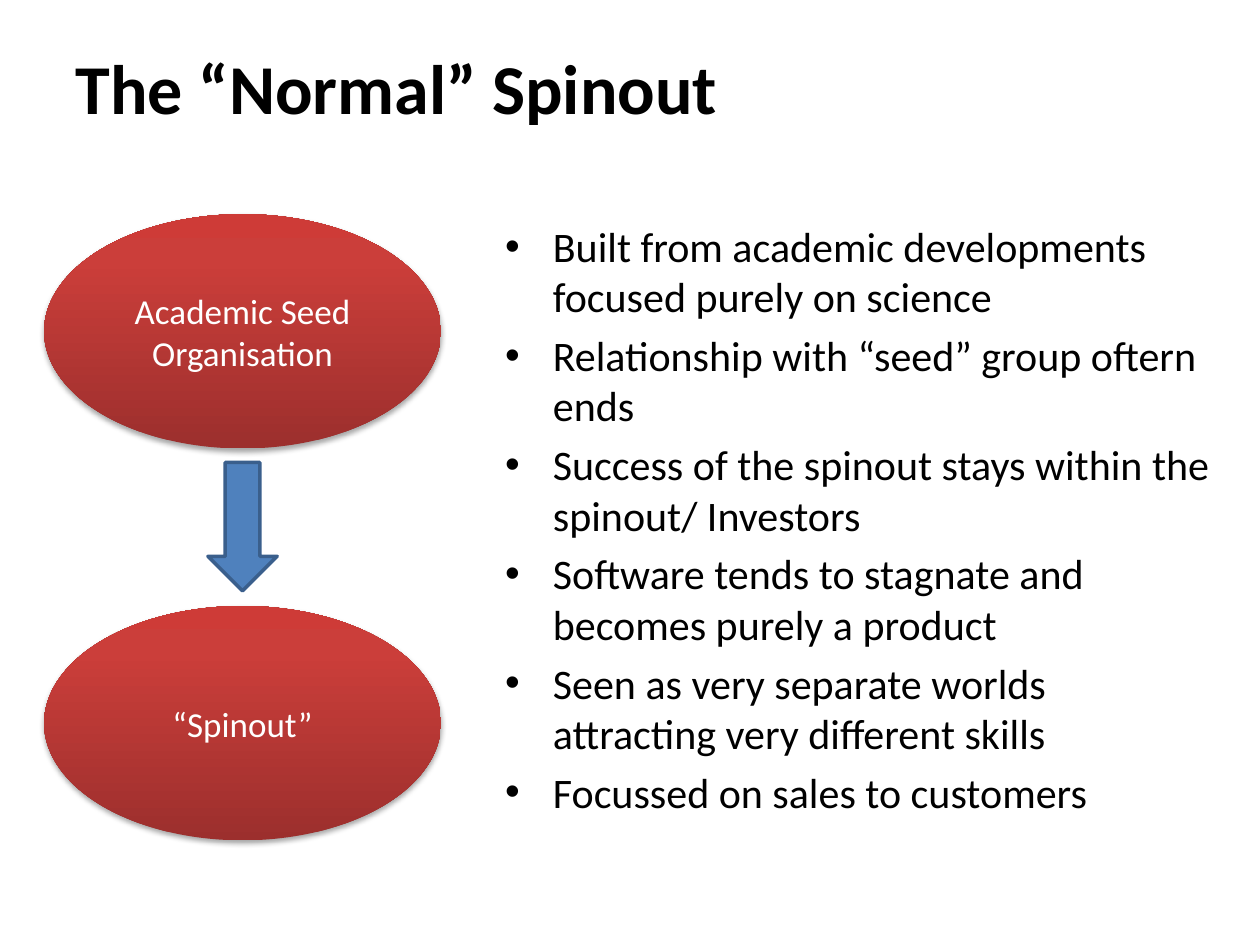
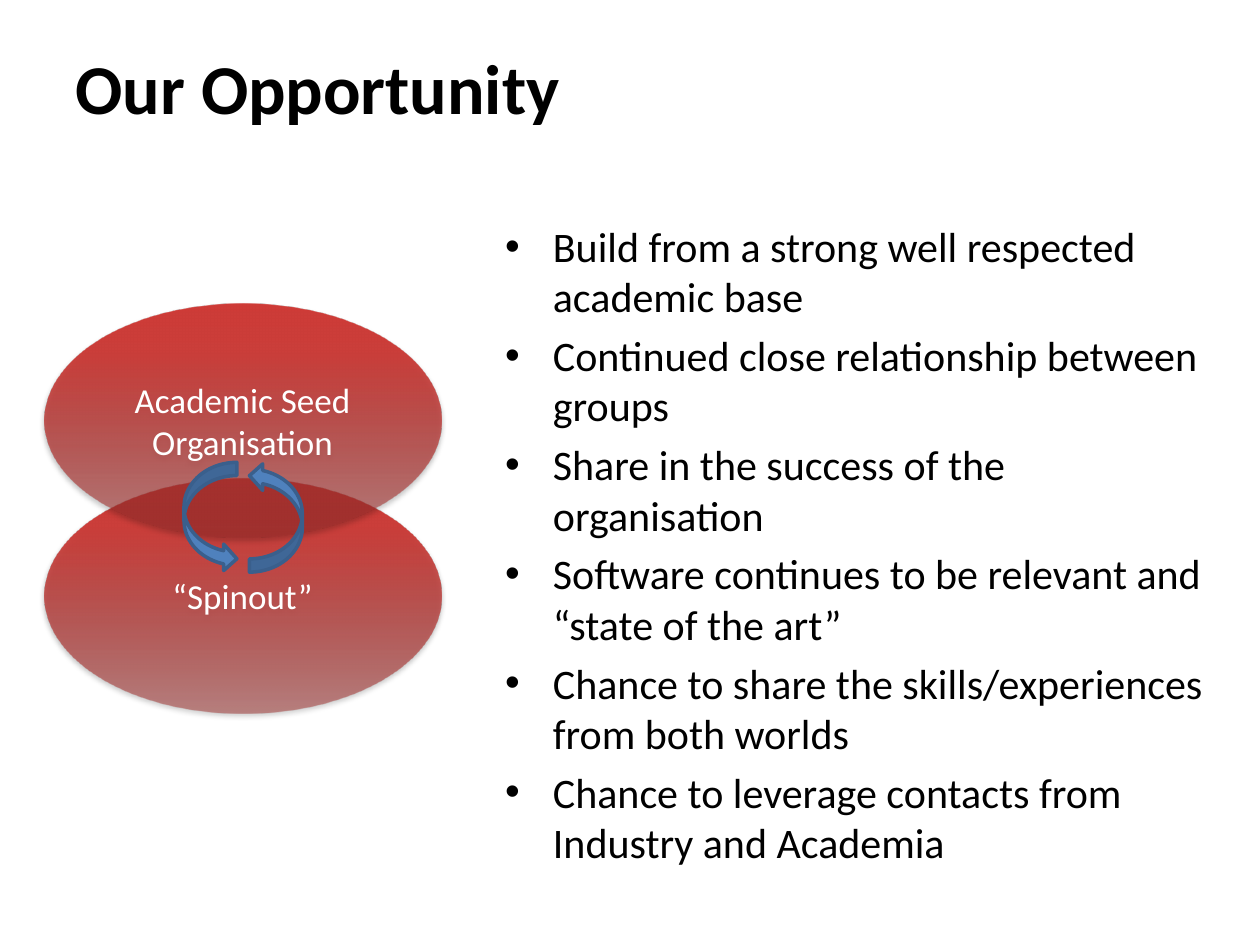
from lxml import etree
from pptx import Presentation
from pptx.dml.color import RGBColor
from pptx.enum.shapes import MSO_SHAPE as SHAPE
from pptx.enum.text import MSO_ANCHOR as ANCHOR, MSO_AUTO_SIZE as AUTO, PP_ALIGN as ALIGN
from pptx.oxml import parse_xml
from pptx.oxml.ns import qn
from pptx.util import Pt

PX = 9144  # 100 px to the inch
FONT = "Calibri"
BLACK, WHITE, BLUE, NAVY = "000000", "FFFFFF", "4F81BD", "3A5F8C"
REDS = [(0, "9C2F2D"), (80000, "CB3E3A"), (100000, "CE3B37")]
NS = 'xmlns:a="http://schemas.openxmlformats.org/drawingml/2006/main"'
SHADOW = (f'<a:effectLst {NS}><a:outerShdw blurRad="40000" dist="23000" dir="5400000" '
          'rotWithShape="0"><a:srgbClr val="000000"><a:alpha val="35000"/></a:srgbClr>'
          '</a:outerShdw></a:effectLst>')

# Each oval is (label, top); each arrow is (shape, left, width, height, rotation)
SLIDES = [
    dict(
        title="The “Normal” Spinout",
        ovals=[("“Spinout”", 481), ("Academic Seed Organisation", 170)],
        base_alpha=100000,
        arrows=[(SHAPE.DOWN_ARROW, 165, 55, 102, 0)],
        bullets=[
            "Built from academic developments focused purely on science",
            "Relationship with “seed” group oftern ends",
            "Success of the spinout stays within the spinout/ Investors",
            "Software tends to stagnate and becomes purely a product",
            "Seen as very separate worlds attracting very different skills",
            "Focussed on sales to customers",
        ],
    ),
    dict(
        title="Our Opportunity",
        ovals=[("“Spinout”", 380), ("Academic Seed Organisation", 241)],
        base_alpha=50000,
        arrows=[(SHAPE.CURVED_RIGHT_ARROW, 146, 42, 87, 0),
                (SHAPE.CURVED_RIGHT_ARROW, 198, 42, 87, 180)],
        bullets=[
            "Build from a strong well respected academic base",
            "Continued close relationship between groups",
            "Share in the success of the organisation",
            "Software continues to be relevant and “state of the art”",
            "Chance to share the skills/experiences from both worlds",
            "Chance to leverage contacts from Industry and Academia",
        ],
    ),
]


def rgb(color):
    return RGBColor.from_string(color)


def style(p, size, color, align, bold=False):
    p.alignment = align
    for r in p.runs:
        r.font.name, r.font.size, r.font.bold = FONT, Pt(size), bold
        r.font.color.rgb = rgb(color)


prs = Presentation()
prs.slide_width, prs.slide_height = 1000 * PX, 750 * PX

for content in SLIDES:
    s = prs.slides.add_slide(prs.slide_layouts[5])

    # Title
    title = s.shapes.title
    title.left, title.top, title.width, title.height = 50 * PX, 30 * PX, 615 * PX, 77 * PX
    tf = title.text_frame
    tf.text = content["title"]
    tf.vertical_anchor, tf.auto_size = ANCHOR.BOTTOM, AUTO.NONE
    style(tf.paragraphs[0], 40, BLACK, ALIGN.LEFT, bold=True)

    # Ovals, darkest at the bottom
    stops = ""
    for pos, color in REDS:
        alpha = content["base_alpha"] if pos == 0 else 100000
        stops += (f'<a:gs pos="{pos}"><a:srgbClr val="{color}">'
                  f'<a:alpha val="{alpha}"/></a:srgbClr></a:gs>')
    gradient = (f'<a:gradFill {NS} rotWithShape="1"><a:gsLst>{stops}</a:gsLst>'
                '<a:lin ang="16200000" scaled="0"/></a:gradFill>')
    for label, top in content["ovals"]:
        sp = s.shapes.add_shape(SHAPE.OVAL, 35 * PX, top * PX, 315 * PX, 186 * PX)
        sp.line.fill.background()
        sp_pr = sp.fill._xPr
        sp_pr.find(qn("a:prstGeom")).addnext(parse_xml(gradient))
        sp_pr.append(parse_xml(SHADOW))
        tf = sp.text_frame
        tf.text = label
        tf.word_wrap, tf.vertical_anchor = True, ANCHOR.MIDDLE
        style(tf.paragraphs[0], 20, WHITE, ALIGN.CENTER)

    # Arrows between the ovals
    for shape, left, width, height, rotation in content["arrows"]:
        sp = s.shapes.add_shape(shape, left * PX, 367 * PX, width * PX, height * PX)
        sp.rotation = rotation
        sp.shadow.inherit = False
        sp.fill.solid()
        sp.fill.fore_color.rgb = rgb(BLUE)
        sp.line.color.rgb = rgb(NAVY)
        sp.line.width = Pt(2)

    # Bullet list
    tf = s.shapes.add_textbox(391 * PX, 170 * PX, 582 * PX, 500 * PX).text_frame
    tf.word_wrap = True
    tf.text = "\n".join(content["bullets"])
    for p in tf.paragraphs:
        style(p, 24, BLACK, ALIGN.LEFT)
        p.space_before = Pt(4.8)
        p_pr = p._p.get_or_add_pPr()
        p_pr.set("marL", str(38 * PX))
        p_pr.set("indent", str(-38 * PX))
        etree.SubElement(p_pr, qn("a:buFont")).set("typeface", "Arial")
        etree.SubElement(p_pr, qn("a:buChar")).set("char", "•")

prs.save("out.pptx")
